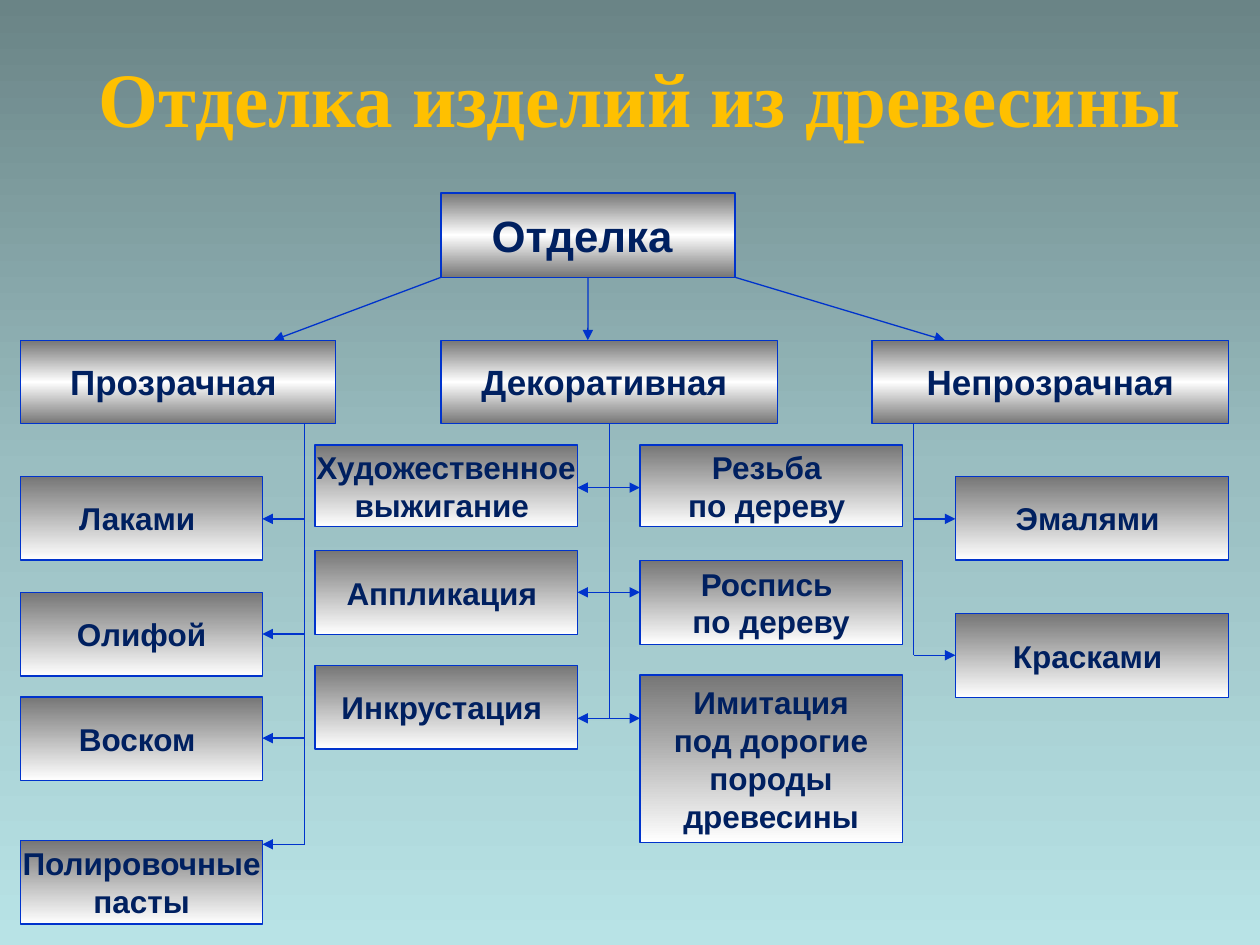
from collections import namedtuple
from copy import deepcopy

from lxml import etree
from pptx import Presentation
from pptx.dml.color import RGBColor
from pptx.enum import shapes, text
from pptx.oxml.ns import qn
from pptx.util import Cm, Pt

GOLD = RGBColor(0xFF, 0xC0, 0x00)
NAVY = RGBColor(0x00, 0x20, 0x60)
BLUE = RGBColor(0x00, 0x33, 0xCC)
GREY = RGBColor(0x76, 0x76, 0x76)
WHITE = RGBColor(0xFF, 0xFF, 0xFF)
BACKDROP = [RGBColor(0x6A, 0x84, 0x86), RGBColor(0x9A, 0xBE, 0xC1),
            RGBColor(0xB8, 0xE3, 0xE6)]
METAL = [GREY, WHITE, GREY]
FADE = [GREY, WHITE]
LEAF_HEIGHT = 1.69

# All lengths are in centimetres; columns and leaves are offsets from a branch box.
Box = namedtuple("Box", "left top width height")
Column = namedtuple("Column", "left width leaves")
Leaf = namedtuple("Leaf", "label top height", defaults=[LEAF_HEIGHT])


def fill_gradient(fill, element, colors):
    """Fill from top to bottom with evenly spaced colours."""
    fill.gradient()
    fill.gradient_angle = 270
    stops = element.xpath(".//a:gsLst")[0]
    while len(stops) < len(colors):
        stops.append(deepcopy(stops[-1]))
    for i, (stop, color) in enumerate(zip(fill.gradient_stops, colors)):
        stop.color.rgb = color
        stops[i].set("pos", str(100000 * i // (len(colors) - 1)))


def add_title(slide, box, label):
    title = slide.shapes.title
    title.left, title.top, title.width, title.height = map(Cm, box)
    tf = title.text_frame
    tf.text = label
    tf.auto_size = text.MSO_AUTO_SIZE.NONE
    tf.vertical_anchor = text.MSO_ANCHOR.MIDDLE
    p = tf.paragraphs[0]
    p.alignment = text.PP_ALIGN.CENTER
    p.font.name, p.font.size, p.font.bold = "Times New Roman", Pt(44), True
    p.font.color.rgb = GOLD


def add_node(slide, box, label, size, colors):
    sp = slide.shapes.add_shape(
        shapes.MSO_SHAPE.FLOWCHART_PROCESS, *map(Cm, box))
    sp.shadow.inherit = False
    fill_gradient(sp.fill, sp._element.spPr, colors)
    sp.line.color.rgb = BLUE
    sp.line.width = Pt(0.75)
    tf = sp.text_frame
    tf.text = label
    tf.word_wrap = False
    tf.vertical_anchor = text.MSO_ANCHOR.MIDDLE
    for p in tf.paragraphs:
        p.alignment = text.PP_ALIGN.CENTER
        p.font.name, p.font.size, p.font.bold = "Arial", Pt(size), True
        p.font.color.rgb = NAVY


def add_line(slide, start, end, arrows=()):
    """Draw a line; arrows names its pointed ends, headEnd before tailEnd."""
    line = slide.shapes.add_connector(
        shapes.MSO_CONNECTOR.STRAIGHT, *map(Cm, start + end))
    line.line.color.rgb = BLUE
    line.line.width = Pt(0.75)
    props = line._element.spPr
    for name in arrows:
        etree.SubElement(props.find(qn("a:ln")), qn("a:" + name), type="triangle")
    etree.SubElement(props, qn("a:effectLst"))


def add_root(slide, box, label, targets):
    """Place the top node and its arrows from left corner, middle and right corner."""
    add_node(slide, box, label, 25, METAL)
    bottom = box.top + box.height
    for i, target in enumerate(targets):
        add_line(slide, (box.left + box.width * i / 2, bottom), target, ["tailEnd"])


def add_branch(slide, box, label, trunk, arrow_tops, columns):
    """Place a heading, its trunk line and the columns of leaves beside the trunk."""
    add_node(slide, box, label, 20, METAL)
    x = box.left + trunk
    add_line(slide, (x, box.top + box.height), (x, box.top + arrow_tops[-1]))
    edges = []
    for column in columns:
        left = box.left + column.left
        edges.append(left + column.width if left < x - column.width / 2 else left)
        for leaf in column.leaves:
            leaf_box = Box(left, box.top + leaf.top, column.width, leaf.height)
            add_node(slide, leaf_box, leaf.label, 18, FADE)
    two_sided = len(edges) == 2
    start = edges[0] if two_sided else x
    arrows = ["headEnd", "tailEnd"] if two_sided else ["tailEnd"]
    for top in arrow_tops:
        y = box.top + top
        add_line(slide, (start, y), (edges[-1], y), arrows)


def main():
    prs = Presentation()
    prs.slide_width, prs.slide_height = Cm(25.4), Cm(19.05)
    slide = prs.slides.add_slide(prs.slide_layouts[5])
    fill_gradient(slide.background.fill, slide._element, BACKDROP)
    add_title(slide, Box(1.27, 1.06, 23.28, 1.78), "Отделка изделий из древесины")

    row = 6.86
    add_root(slide, Box(8.89, 3.89, 5.93, 1.7), "Отделка ",
             [(5.51, row), (11.85, row), (19.05, row)])
    add_branch(slide, Box(0.42, row, 6.35, 1.68), "Прозрачная ", 5.72,
               [3.6, 5.92, 8.02, 10.16],
               [Column(0, 4.87, [Leaf("Лаками ", 2.74),
                                 Leaf("Олифой", 5.08),
                                 Leaf("Воском ", 7.19),
                                 Leaf("Полировочные\nпасты", 10.08)])])
    add_branch(slide, Box(8.89, row, 6.78, 1.68), "Декоративная ", 3.39,
               [2.97, 5.08, 7.62],
               [Column(-2.54, 5.29,
                       [Leaf("Художественное\nвыжигание ", 2.11, 1.65),
                        Leaf("Аппликация ", 4.24),
                        Leaf("Инкрустация ", 6.55)]),
                Column(4.01, 5.29,
                       [Leaf("Резьба \nпо дереву ", 2.11, 1.65),
                        Leaf("Роспись \nпо дереву", 4.44),
                        Leaf("Имитация\nпод дорогие\nпороды\nдревесины",
                             6.75, 3.38)])])
    add_branch(slide, Box(17.58, row, 7.19, 1.68), "Непрозрачная", 0.84,
               [3.6, 6.35],
               [Column(1.68, 5.51, [Leaf("Эмалями ", 2.74),
                                    Leaf("Красками ", 5.51)])])
    prs.save("out.pptx")


if __name__ == "__main__":
    main()
